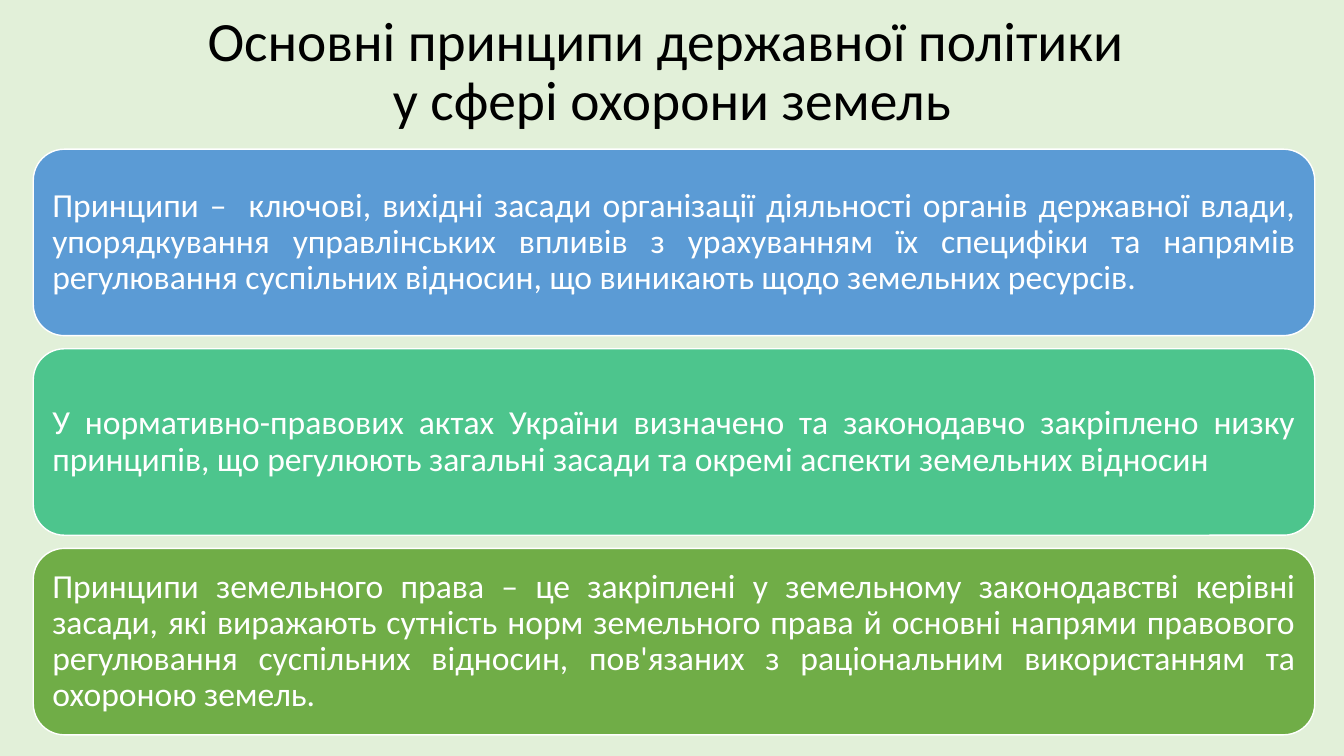
from pptx import Presentation
from pptx.dml.color import RGBColor
from pptx.enum.shapes import MSO_SHAPE as Shape
from pptx.enum.text import MSO_ANCHOR as Anchor, MSO_AUTO_SIZE as AutoSize, PP_ALIGN as Align
from pptx.util import Inches, Pt

BACKGROUND = RGBColor(0xE2, 0xF0, 0xD9)
BLACK = RGBColor(0x00, 0x00, 0x00)
WHITE = RGBColor(0xFF, 0xFF, 0xFF)
BLUE = RGBColor(0x5B, 0x9B, 0xD5)
TEAL = RGBColor(0x4D, 0xC5, 0x8D)
GREEN = RGBColor(0x70, 0xAD, 0x47)

TITLE = "Основні принципи державної політики \vу сфері охорони земель"
PRINCIPLES = [
    (BLUE, "Принципи –  ключові, вихідні засади організації діяльності органів "
           "державної влади, упорядкування управлінських впливів з урахуванням їх "
           "специфіки та напрямів регулювання суспільних відносин, що виникають "
           "щодо земельних ресурсів."),
    (TEAL, "У нормативно-правових актах України визначено та законодавчо закріплено "
           "низку принципів, що регулюють загальні засади та окремі аспекти "
           "земельних відносин"),
    (GREEN, "Принципи земельного права – це закріплені у земельному законодавстві "
            "керівні засади, які виражають сутність норм земельного права й основні "
            "напрями правового регулювання суспільних відносин, пов'язаних з "
            "раціональним використанням та охороною земель."),
]

WIDTH, HEIGHT = 13.33, 7.5
TITLE_TOP, TITLE_WIDTH, TITLE_HEIGHT = 0.21, 11.5, 1.03
CARD_LEFT, CARD_TOP, CARD_WIDTH, CARD_HEIGHT = 0.33, 1.48, 12.71, 1.85
CARD_STEP = 1.98


def write(box, text, size, color, align):
    frame = box.text_frame
    frame.text = text
    frame.word_wrap = True
    frame.auto_size = AutoSize.NONE
    frame.vertical_anchor = Anchor.MIDDLE
    para = frame.paragraphs[0]
    para.alignment = align
    para.line_spacing = 0.9
    for span in para.runs:
        span.font.name = "Calibri"
        span.font.size = Pt(size)
        span.font.color.rgb = color
    return frame


def add_title(page):
    title = page.shapes.title
    title.left, title.top = Inches((WIDTH - TITLE_WIDTH) / 2), Inches(TITLE_TOP)
    title.width, title.height = Inches(TITLE_WIDTH), Inches(TITLE_HEIGHT)
    write(title, TITLE, size=39.6, color=BLACK, align=Align.CENTER)


def add_card(page, row, fill, text):
    card = page.shapes.add_shape(
        Shape.ROUNDED_RECTANGLE, Inches(CARD_LEFT), Inches(CARD_TOP + row * CARD_STEP),
        Inches(CARD_WIDTH), Inches(CARD_HEIGHT))
    card.shadow.inherit = False
    card.fill.solid()
    card.fill.fore_color.rgb = fill
    card.line.color.rgb = WHITE
    card.line.width = Pt(1)
    frame = write(card, text, size=24, color=WHITE, align=Align.JUSTIFY)
    frame.margin_left = frame.margin_right = Inches(0.1)
    frame.margin_top = frame.margin_bottom = Inches(0.1)


def main():
    deck = Presentation()
    deck.slide_width, deck.slide_height = Inches(WIDTH), Inches(HEIGHT)
    page = deck.slides.add_slide(deck.slide_layouts.get_by_name("Title Only"))
    page.background.fill.solid()
    page.background.fill.fore_color.rgb = BACKGROUND
    add_title(page)
    for row, (fill, text) in enumerate(PRINCIPLES):
        add_card(page, row, fill, text)
    deck.save("out.pptx")


if __name__ == "__main__":
    main()
